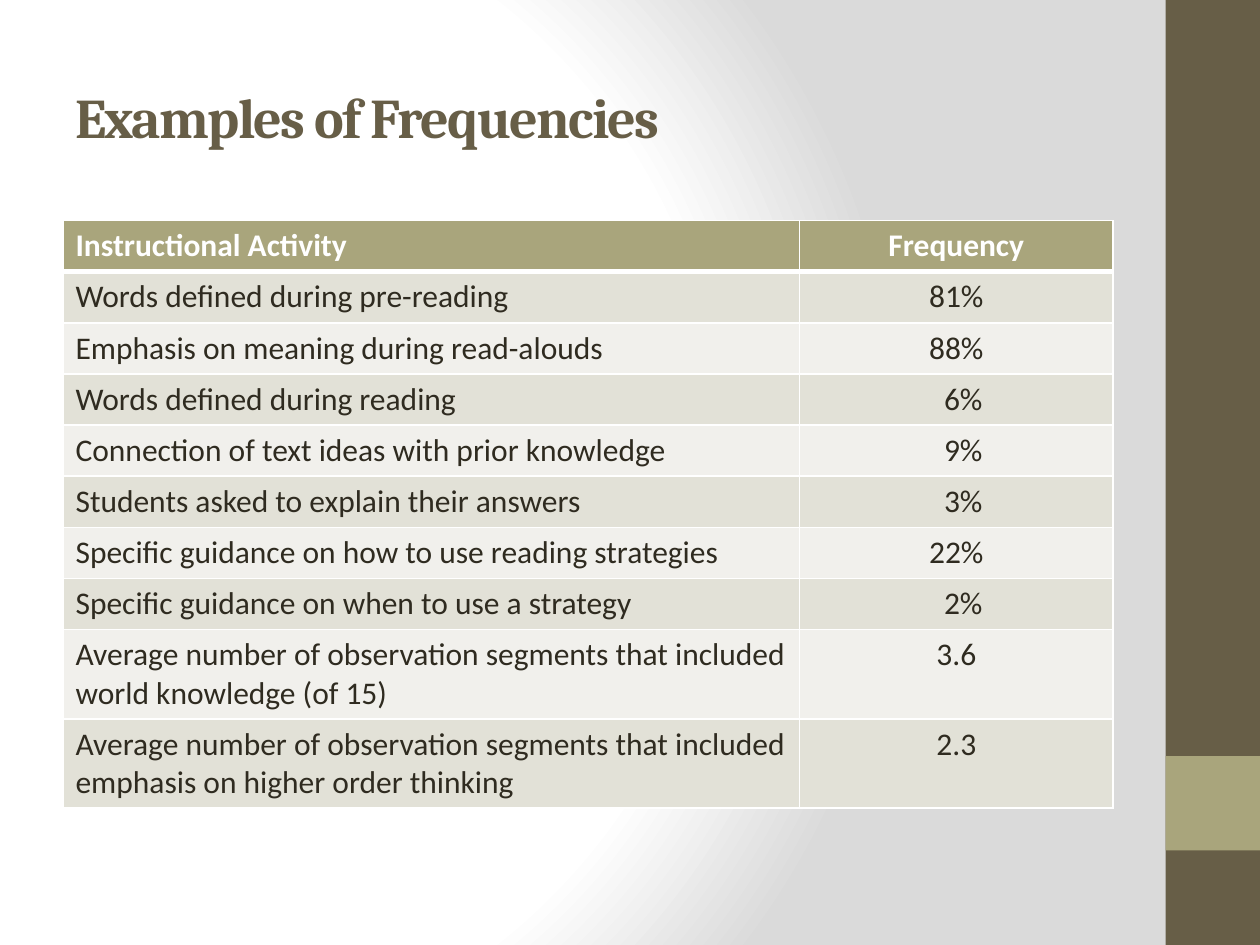
from dataclasses import dataclass

from pptx import Presentation
from pptx.dml.color import RGBColor
from pptx.enum.shapes import MSO_SHAPE
from pptx.enum.text import MSO_ANCHOR, PP_ALIGN
from pptx.oxml import parse_xml
from pptx.oxml.ns import nsdecls
from pptx.util import Pt

RECT = MSO_SHAPE.RECTANGLE
MIDDLE = MSO_ANCHOR.MIDDLE
LEFT, CENTER = PP_ALIGN.LEFT, PP_ALIGN.CENTER


@dataclass(frozen=True)
class Theme:
    brown: str = "675E47"
    olive: str = "A9A57C"
    ink: str = "2F2B20"
    white: str = "FFFFFF"
    gray: str = "DADADA"
    bands: tuple = ("E2E1D7", "F1F0EC")
    head: str = "Cambria"
    body: str = "Calibri"
    title: int = 32
    text: int = 18


THEME = Theme()
WIDTHS = (421, 179)
SHORT, TALL = 29.25, 51
PAD = 8  # lines up one-digit percentages with the longer ones
ROWS = [
    ("Instructional Activity", "Frequency"),
    ("Words defined during pre-reading", "81%"),
    ("Emphasis on meaning during read-alouds", "88%"),
    ("Words defined during reading", "6%"),
    ("Connection of text ideas with prior knowledge", "9%"),
    ("Students asked to explain their answers", "3%"),
    ("Specific guidance on how to use reading strategies", "22%"),
    ("Specific guidance on when to use a strategy", "2%"),
    ("Average number of observation segments that included "
     "world knowledge (of 15)", "3.6"),
    ("Average number of observation segments that included "
     "emphasis on higher order thinking", "2.3"),
]


def rgb(code):
    return RGBColor.from_string(code)


def paint_back(slide):
    stops = ((0, THEME.white), (75, THEME.white), (100, THEME.gray))
    marks = "".join(
        f'<a:gs pos="{pos * 1000}"><a:srgbClr val="{code}"/></a:gs>'
        for pos, code in stops)
    slide._element.cSld.insert(0, parse_xml(
        f'<p:bg {nsdecls("p", "a")}><p:bgPr><a:gradFill rotWithShape="1">'
        f'<a:gsLst>{marks}</a:gsLst><a:path path="circle">'
        '<a:fillToRect l="20000" t="50000" r="100000" b="50000"/>'
        '</a:path></a:gradFill><a:effectLst/></p:bgPr></p:bg>'))


def add_block(slide, box, color):
    shape = slide.shapes.add_shape(RECT, *map(Pt, box))
    shape.shadow.inherit = False
    shape.fill.solid()
    shape.fill.fore_color.rgb = rgb(color)
    shape.line.fill.background()


def write(frame, text, color, align=LEFT, **style):
    par = frame.paragraphs[0]
    par.alignment = align
    run = par.add_run()
    run.text = text
    for name, value in style.items():
        setattr(run.font, name, value)
    run.font.color.rgb = rgb(color)
    return run


def add_title(slide, box, text):
    frame = slide.shapes.add_textbox(*map(Pt, box)).text_frame
    frame.word_wrap = True
    frame.vertical_anchor = MIDDLE
    run = write(frame, text, THEME.brown, name=THEME.head,
                size=Pt(THEME.title), bold=True)
    run.font._element.set("spc", "-100")


def add_edges(cell, **sides):
    """Draw white cell borders; sides gives the width of L, R, T and B."""
    props = cell._tc.get_or_add_tcPr()
    for side, width in sides.items():
        props.append(parse_xml(
            f'<a:ln{side} {nsdecls("a")} w="{Pt(width)}"><a:solidFill>'
            f'<a:srgbClr val="{THEME.white}"/></a:solidFill></a:ln{side}>'))


def fill_cell(cell, text, row, col):
    top = row == 0
    add_edges(cell, L=1, R=1, T=3 if row == 1 else 1, B=3 if top else 1)
    cell.fill.solid()
    cell.fill.fore_color.rgb = rgb(
        THEME.olive if top else THEME.bands[(row - 1) % 2])
    write(cell.text_frame, text, THEME.white if top else THEME.ink,
          CENTER if col else LEFT, name=THEME.body,
          size=Pt(THEME.text), bold=top)
    if len(text) == 2:
        cell.margin_left = Pt(7.2 + PAD)


def add_grid(slide, left, top):
    highs = [SHORT] * (len(ROWS) - 2) + [TALL] * 2
    table = slide.shapes.add_table(
        len(ROWS), len(WIDTHS), Pt(left), Pt(top),
        Pt(sum(WIDTHS)), Pt(sum(highs))).table
    for col, width in zip(table.columns, WIDTHS):
        col.width = Pt(width)
    for row, (high, texts) in enumerate(zip(highs, ROWS)):
        table.rows[row].height = Pt(high)
        for col, text in enumerate(texts):
            fill_cell(table.cell(row, col), text, row, col)


def main():
    deck = Presentation()
    deck.slide_width, deck.slide_height = Pt(720), Pt(540)
    slide = deck.slides.add_slide(deck.slide_layouts[6])
    paint_back(slide)
    add_block(slide, (666, 0, 54, 540), THEME.brown)
    add_block(slide, (666, 432, 54, 54), THEME.olive)
    add_title(slide, (36, 21.6, 600, 90), "Examples of Frequencies")
    add_grid(slide, 36, 126)
    deck.save("out.pptx")


if __name__ == "__main__":
    main()
